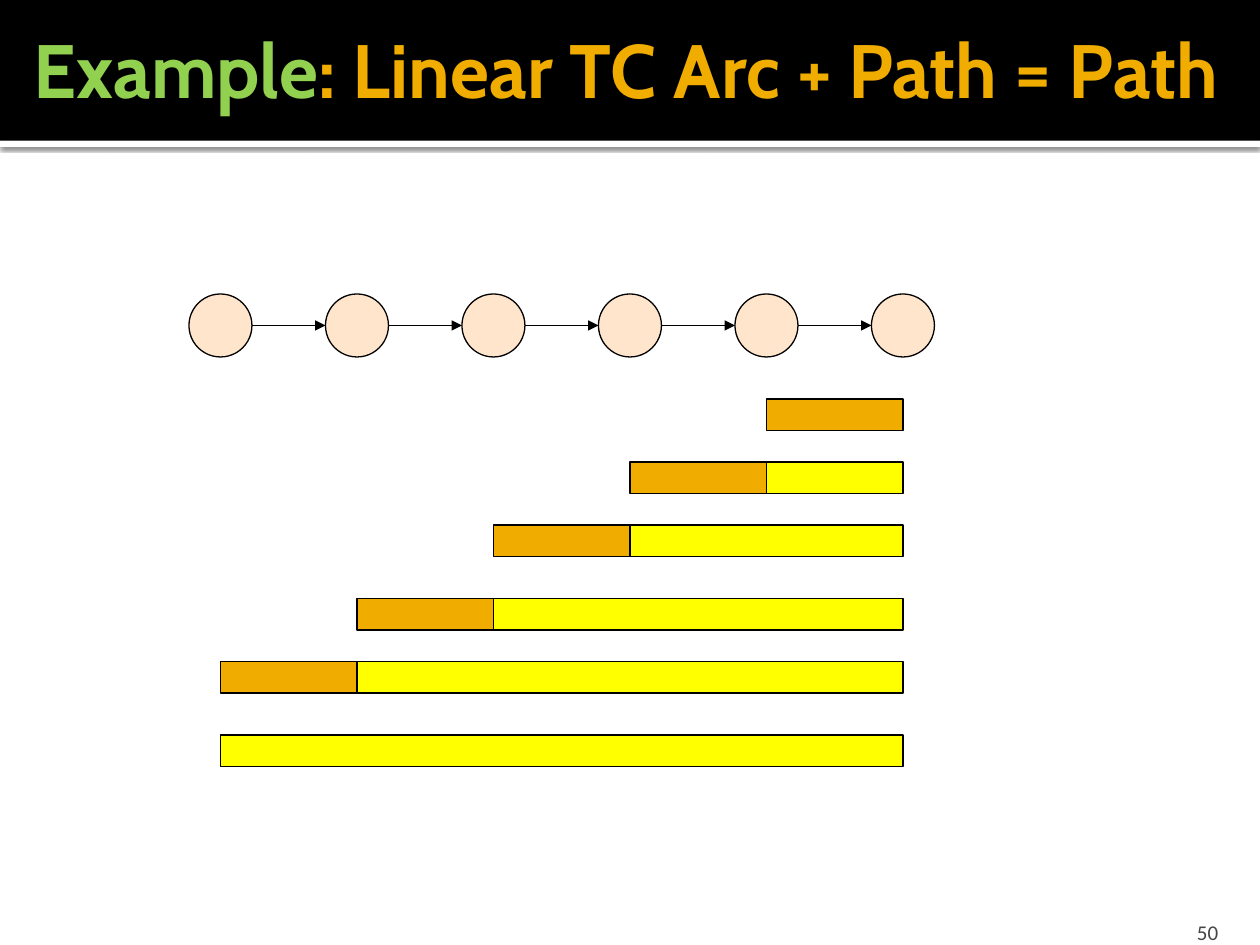
from lxml.etree import SubElement
from pptx import Presentation
from pptx.dml.color import RGBColor
from pptx.enum.shapes import MSO_CONNECTOR as CONN, MSO_SHAPE as SHAPE
from pptx.enum.text import MSO_ANCHOR as ANCHOR, PP_ALIGN as ALIGN
from pptx.oxml.ns import qn
from pptx.util import Inches, Pt

COLS_PER_INCH = 12  # the slide is a grid of 120 by 90 square cells
BLACK, WHITE, GREEN, GREY = "000000", "FFFFFF", "92D050", "454545"
ORANGE, YELLOW, PEACH = "F0AD00", "FFFF00", "FFCC99"


def rgb(color):
    return RGBColor.from_string(color)


def grid(*cells):
    return [Inches(c / COLS_PER_INCH) for c in cells]


class Canvas:
    """Current slide and its style; lengths are in grid cells."""

    line_width = Pt(0.75)

    def __init__(self, slide):
        self.s = slide

    def shape(self, kind, x, y, w, h, fill, line=BLACK, alpha=None):
        sp = self.s.shapes.add_shape(kind, *grid(x, y, w, h))
        sp.shadow.inherit = False
        sp.fill.solid()
        sp.fill.fore_color.rgb = rgb(fill)
        if alpha:
            clr = sp._element.spPr.find(qn("a:solidFill"))[0]
            SubElement(clr, qn("a:alpha"), val=str(alpha * 1000))
        if line:
            sp.line.color.rgb = rgb(line)
            sp.line.width = self.line_width
        else:
            sp.line.fill.background()
        return sp

    def bar(self, x, y, w, h, fill, line=BLACK):
        return self.shape(SHAPE.RECTANGLE, x, y, w, h, fill, line)

    def drop_shadow(self, sp):
        effects = sp._element.spPr.find(qn("a:effectLst"))
        shadow = SubElement(effects, qn("a:outerShdw"), blurRad=str(Pt(2.5)),
                            dist=str(Pt(0.8)), dir="5400000", rotWithShape="0")
        clr = SubElement(shadow, qn("a:srgbClr"), val=BLACK)
        SubElement(clr, qn("a:alpha"), val="60000")

    def arrow(self, x1, x2, y):
        c = self.s.shapes.add_connector(CONN.STRAIGHT, *grid(x1, y, x2, y))
        c.line.color.rgb = rgb(BLACK)
        c.line.width = self.line_width
        SubElement(c.line._get_or_add_ln(), qn("a:tailEnd"), type="triangle")
        SubElement(c._element.spPr, qn("a:effectLst"))

    def text(self, x, y, w, h, runs, font, size, bold=False,
             align=ALIGN.LEFT, anchor=ANCHOR.MIDDLE, right=0.1, bottom=0.05):
        """Runs are (text, color) pairs; insets are in inches."""
        tf = self.s.shapes.add_textbox(*grid(x, y, w, h)).text_frame
        tf.word_wrap = True
        tf.vertical_anchor = anchor
        tf.margin_right, tf.margin_bottom = Inches(right), Inches(bottom)
        p = tf.paragraphs[0]
        p.alignment = align
        for content, color in runs:
            r = p.add_run()
            r.text = content
            r.font.name, r.font.size, r.font.bold = font, Pt(size), bold
            r.font.color.rgb = rgb(color)


def main():
    prs = Presentation()
    prs.slide_width, prs.slide_height = Inches(10), Inches(7.5)
    canvas = Canvas(prs.slides.add_slide(prs.slide_layouts[6]))

    # Header
    header = 13.4
    canvas.drop_shadow(canvas.bar(0, header, 120, 0.6, WHITE, line=None))
    canvas.bar(0, 0, 120, header, BLACK, line=None)
    canvas.text(107.6, 86.4, 9.6, 3.6, [("50", GREY)], "Calibri", 12,
                align=ALIGN.RIGHT, anchor=ANCHOR.BOTTOM, bottom=0)
    canvas.text(2, -1, 118, 15,
                [("Example", GREEN), (": Linear TC Arc + Path = Path", ORANGE)],
                "Cabin", 43.2, bold=True, right=0.05)

    # Chain of nodes
    nodes, step, size, top = 6, 13, 6, 28
    centers = [21 + step * i for i in range(nodes)]
    for x in centers:
        canvas.shape(SHAPE.OVAL, x - size / 2, top, size, size, PEACH, alpha=50)
    for a, b in zip(centers, centers[1:]):
        canvas.arrow(a + size / 2, b - size / 2, top + size / 2)

    # Each row puts one arc in front of the path found so far
    end, height = centers[-1], 3
    for n, y in enumerate([38, 44, 50, 57, 63, 70]):
        path_start = end - n * step
        if n:
            canvas.bar(path_start, y, n * step, height, YELLOW)
        if n < nodes - 1:
            canvas.bar(path_start - step, y, step, height, ORANGE)

    prs.save("out.pptx")


if __name__ == "__main__":
    main()
